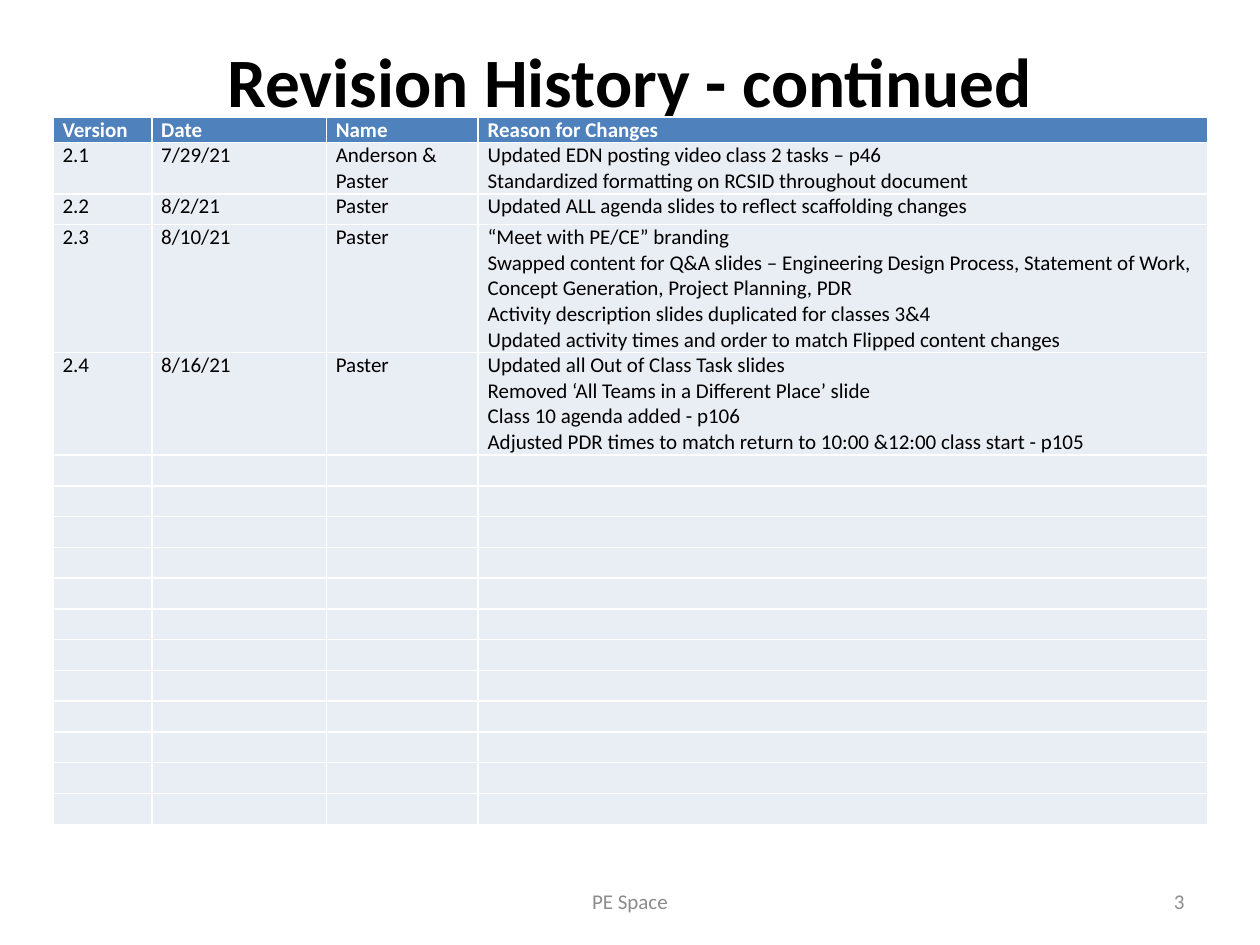
from pptx import Presentation
from pptx.dml.color import RGBColor
from pptx.enum.text import MSO_ANCHOR, PP_ALIGN
from pptx.util import Cm, Pt

TOP, MIDDLE = MSO_ANCHOR.TOP, MSO_ANCHOR.MIDDLE
LEFT, CENTER, RIGHT = PP_ALIGN.LEFT, PP_ALIGN.CENTER, PP_ALIGN.RIGHT

FONT = "Calibri"
BLACK, WHITE, GREY = "000000", "FFFFFF", "8C8C8C"
HEADER_FILL, BODY_FILL = "4F81BD", "E9EDF4"
TEXT_SIZE = 12

COLUMN_WIDTHS = [1.99, 3.52, 3.06, 14.7]
HEADER_HEIGHT, ROW_HEIGHT = 0.18, 0.62
EMPTY_ROWS = 12

HEADINGS = ["Version", "Date", "Name", "Reason for Changes"]
REVISIONS = [
    ["2.1", "7/29/21", "Anderson & Paster",
     "Updated EDN posting video class 2 tasks – p46\n"
     "Standardized formatting on RCSID throughout document"],
    ["2.2", "8/2/21", "Paster",
     "Updated ALL agenda slides to reflect scaffolding changes"],
    ["2.3", "8/10/21", "Paster",
     "“Meet with PE/CE” branding\n"
     "Swapped content for Q&A slides – Engineering Design Process, "
     "Statement of Work, Concept Generation, Project Planning, PDR\n"
     "Activity description slides duplicated for classes 3&4\n"
     "Updated activity times and order to match Flipped content changes"],
    ["2.4", "8/16/21", "Paster",
     "Updated all Out of Class Task slides\n"
     "Removed ‘All Teams in a Different Place’ slide\n"
     "Class 10 agenda added - p106\n"
     "Adjusted PDR times to match return to 10:00 &12:00 class start - p105"],
]


def rgb(hex_colour):
    return RGBColor.from_string(hex_colour)


def write(frame, text, size, colour, bold=False, align=LEFT):
    """Fill a text frame, one paragraph per line of text."""
    frame.text = text
    for paragraph in frame.paragraphs:
        paragraph.alignment = align
        font = paragraph.font
        font.name, font.size, font.bold = FONT, Pt(size), bold
        font.color.rgb = rgb(colour)


def set_title(slide, text):
    title = slide.shapes.title
    title.left, title.top = Cm(1.27), Cm(0.76)
    title.width, title.height = Cm(22.86), Cm(3.18)
    frame = title.text_frame
    frame.vertical_anchor = TOP
    frame.margin_top = 0
    write(frame, text, 39.6, BLACK, bold=True, align=CENTER)


def fill_cell(cell, text, fill, colour, bold):
    cell.margin_left = cell.margin_right = Cm(0.19)
    cell.margin_top = cell.margin_bottom = 0
    cell.fill.solid()
    cell.fill.fore_color.rgb = rgb(fill)
    write(cell.text_frame, text, TEXT_SIZE, colour, bold)
    if not text:
        # An empty cell takes its line height from the end-of-paragraph size
        end = cell.text_frame.paragraphs[0]._p.get_or_add_endParaRPr()
        end.set("sz", str(TEXT_SIZE * 100))


def add_revision_table(slide):
    blank_row = [""] * len(HEADINGS)
    rows = [HEADINGS] + REVISIONS + [blank_row] * EMPTY_ROWS
    height = HEADER_HEIGHT + ROW_HEIGHT * (len(rows) - 1)
    table = slide.shapes.add_table(
        len(rows), len(HEADINGS), Cm(1.07), Cm(2.36),
        Cm(sum(COLUMN_WIDTHS)), Cm(height)).table
    table.horz_banding = False
    for column, width in zip(table.columns, COLUMN_WIDTHS):
        column.width = Cm(width)
    for index, texts in enumerate(rows):
        header = index == 0
        row = table.rows[index]
        row.height = Cm(HEADER_HEIGHT if header else ROW_HEIGHT)
        for cell, text in zip(row.cells, texts):
            fill_cell(cell, text, HEADER_FILL if header else BODY_FILL,
                      WHITE if header else BLACK, header)


def add_footer(slide, text, left, width, align):
    frame = slide.shapes.add_textbox(
        Cm(left), Cm(17.65), Cm(width), Cm(1.02)).text_frame
    frame.word_wrap = True
    frame.vertical_anchor = MIDDLE
    write(frame, text, TEXT_SIZE, GREY, align=align)


def main():
    deck = Presentation()
    deck.slide_width, deck.slide_height = Cm(25.4), Cm(19.05)
    slide = deck.slides.add_slide(deck.slide_layouts.get_by_name("Title Only"))
    set_title(slide, "Revision History - continued")
    add_revision_table(slide)
    add_footer(slide, "PE Space", 8.68, 8.04, CENTER)
    add_footer(slide, "3", 18.2, 5.93, RIGHT)
    deck.save("out.pptx")


if __name__ == "__main__":
    main()
